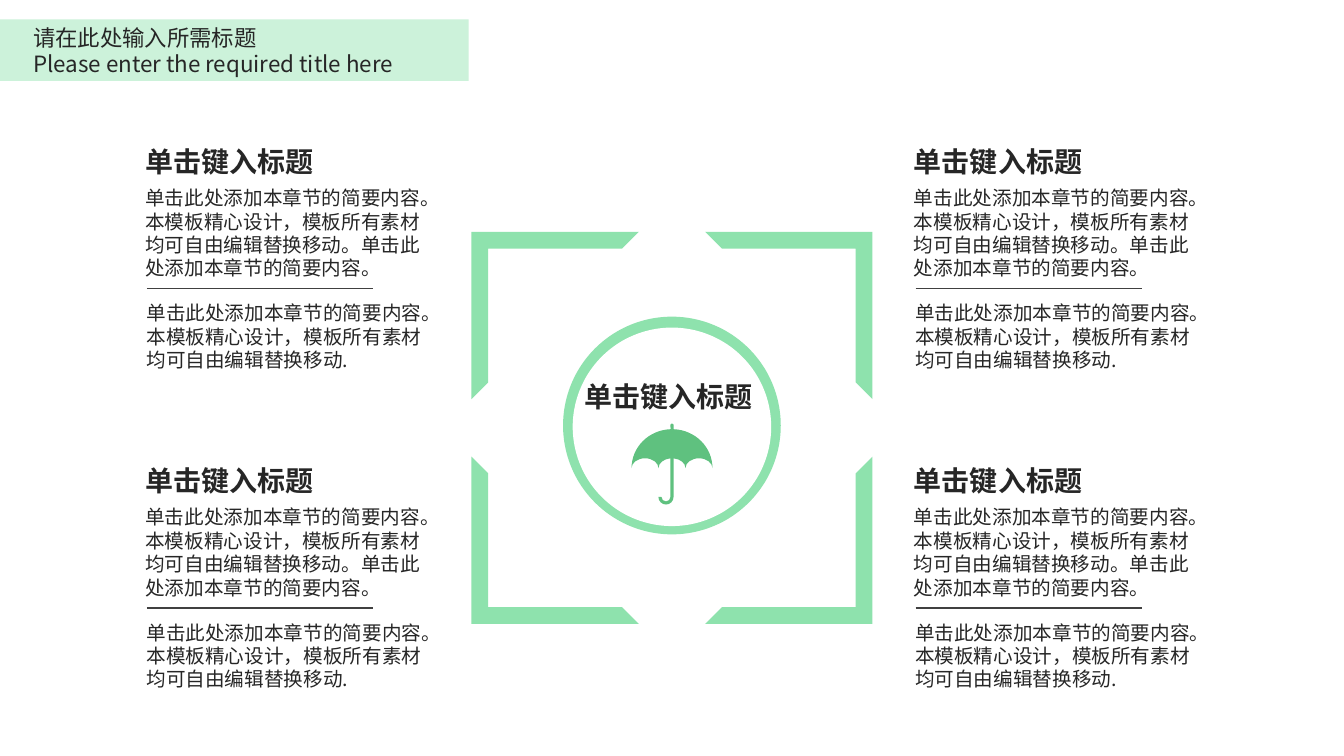
import math

import pptx
import pptx.dml.color
import pptx.enum.shapes
import pptx.oxml.ns
import pptx.util

Pt = pptx.util.Pt
RGBColor = pptx.dml.color.RGBColor
MSO_SHAPE = pptx.enum.shapes.MSO_SHAPE
qn = pptx.oxml.ns.qn

PALE_GREEN = RGBColor(0xCC, 0xF2, 0xDA)
GREEN = RGBColor(0x8E, 0xE2, 0xAD)
DEEP_GREEN = RGBColor(0x5F, 0xC1, 0x7F)
WHITE = RGBColor(0xFF, 0xFF, 0xFF)
INK = RGBColor(0x26, 0x26, 0x26)
RULE_GREY = RGBColor(0x40, 0x40, 0x40)

HEADING = "单击键入标题"
SUMMARY = "单击此处添加本章节的简要内容。本模板精心设计，模板所有素材均可自由编辑替换移动。单击此处添加本章节的简要内容。"
DETAIL = "单击此处添加本章节的简要内容。本模板精心设计，模板所有素材均可自由编辑替换移动."


class SlideBuilder:
    FONT = "Noto Sans CJK SC"

    def __init__(self, slide):
        self.shapes = slide.shapes

    def paint(self, shape, color):
        shape.shadow.inherit = False
        shape.fill.solid()
        shape.fill.fore_color.rgb = color
        shape.line.fill.background()

    def shape(self, kind, left, top, width, height, color):
        shape = self.shapes.add_shape(kind, Pt(left), Pt(top), Pt(width), Pt(height))
        self.paint(shape, color)
        return shape

    def corner(self, left, top, size, flip_h, flip_v):
        bracket = self.shape(MSO_SHAPE.HALF_FRAME, left, top, size, size, GREEN)
        bracket.adjustments[0] = 0.1
        bracket.adjustments[1] = 0.1
        xfrm = bracket._element.spPr.find(qn("a:xfrm"))
        if flip_h:
            xfrm.set("flipH", "1")
        if flip_v:
            xfrm.set("flipV", "1")

    def text(self, wording, left, top, width, height, size, bold=False, spacing=1.0):
        box = self.shapes.add_textbox(Pt(left), Pt(top), Pt(width), Pt(height))
        box.text_frame.word_wrap = True
        paragraph = box.text_frame.paragraphs[0]
        paragraph.text = wording
        paragraph.line_spacing = spacing
        font = paragraph.runs[0].font
        font.size = Pt(size)
        font.bold = bold
        font.name = self.FONT
        font.color.rgb = INK
        east_asian = font._element.makeelement(qn("a:ea"), {"typeface": self.FONT})
        font._element.find(qn("a:latin")).addnext(east_asian)

    def rule(self, left, top, width):
        line = self.shapes.add_connector(
            pptx.enum.shapes.MSO_CONNECTOR.STRAIGHT, Pt(left), Pt(top), Pt(left + width), Pt(top))
        line.line.color.rgb = RULE_GREY
        line.line.width = Pt(1.25)
        properties = line._element.spPr
        properties.append(properties.makeelement(qn("a:effectLst"), {}))

    def outline(self, start, segments, color):
        """Closed outline; a segment holds one point (line) or three (Bézier curve)."""
        builder = self.shapes.build_freeform(Pt(start[0]), Pt(start[1]))
        builder.add_line_segments([(Pt(x), Pt(y)) for points in segments for x, y in points])
        shape = builder.convert_to_shape()
        steps = iter(list(shape._element.iter(qn("a:lnTo"))))
        for points in segments:
            group = [next(steps) for _ in points]
            if len(group) == 3:
                curve = group[0].makeelement(qn("a:cubicBezTo"), {})
                group[0].addprevious(curve)
                for step in group:
                    curve.append(step[0])
                    step.getparent().remove(step)
        self.paint(shape, color)

    def section(self, left, top):
        """Heading, summary, rule and detail of one outer section."""
        self.text(HEADING, left, top, 218, 36, 20, bold=True)
        self.text(SUMMARY, left, top + 30, 218, 75, 14, spacing=Pt(16.75))
        self.rule(left + 8.3, top + 106.7, 161.5)
        self.text(DETAIL, left + 0.8, top + 112.3, 218, 58, 14, spacing=Pt(16.75))


def arc(center_x, center_y, radius_x, radius_y, start, end):
    """Bézier segments of at most 90 degrees; degrees run clockwise from the right."""
    count = math.ceil(abs(end - start) / 90)
    sweep = math.radians(end - start) / count
    pull = 4 / 3 * math.tan(sweep / 4)

    def at(angle, tangent):
        cos, sin = math.cos(angle), math.sin(angle)
        return (center_x + radius_x * (cos - tangent * sin),
                center_y + radius_y * (sin + tangent * cos))

    angles = [math.radians(start) + sweep * i for i in range(count)]
    return [[at(a, pull), at(a + sweep, -pull), at(a + sweep, 0)] for a in angles]


def umbrella(center_x, tip_y):
    """Segments that start and end at the left rim of the canopy."""
    rim_y = tip_y + 32
    dome = (center_x, rim_y, 28.9, 27.8)
    scallop = 9.63
    stem = 1.1
    hook = (center_x - 4.3, tip_y + 52.6)
    left, middle, right = [(center_x + k * 2 * scallop, rim_y, scallop, 7) for k in (-1, 0, 1)]
    return (
        arc(*dome, 180, 268)
        + [[(center_x - stem, tip_y + 1)]] + arc(center_x, tip_y + 1, stem, 1, 180, 360)
        + [[(center_x + stem, tip_y + 4.2)]] + arc(*dome, 272, 360)
        + arc(*right, 360, 180)
        + arc(*middle, 360, 277)
        + [[(center_x + stem, hook[1])]] + arc(*hook, 5.4, 5.4, 0, 180)
        + [[(hook[0] - 3.2, hook[1])]] + arc(*hook, 3.2, 3.2, 180, 0)
        + [[(center_x - stem, rim_y - 7)]] + arc(*middle, 263, 180)
        + arc(*left, 360, 180)
    )


def main():
    deck = pptx.Presentation()
    deck.slide_width, deck.slide_height = Pt(960), Pt(540)
    page = SlideBuilder(deck.slides.add_slide(deck.slide_layouts[6]))

    page.shape(MSO_SHAPE.RECTANGLE, -0.7, 13.9, 335.5, 43.9, PALE_GREEN)
    page.text("请在此处输入所需标题", 16.6, 13.7, 276, 28, 16)
    page.text("Please enter the required title here", 16.6, 32.4, 312, 28, 16)

    for flip_v, top in enumerate((165.6, 326.2)):
        for flip_h, left in enumerate((336.8, 503.7)):
            page.corner(left, top, 119.5, flip_h, flip_v)

    page.shape(MSO_SHAPE.OVAL, 402.2, 226.2, 155.5, 155.5, GREEN)
    page.shape(MSO_SHAPE.OVAL, 409.1, 234, 141.8, 141.8, WHITE)
    page.text(HEADING, 410.2, 267.3, 150, 36, 20, bold=True)
    page.outline((451.1, 334.4), umbrella(480, 302.4), DEEP_GREEN)

    for left in (96.7, 645.7):
        for top in (99.4, 427.4 - 100):
            page.section(left, top)

    deck.save("out.pptx")


if __name__ == "__main__":
    main()
